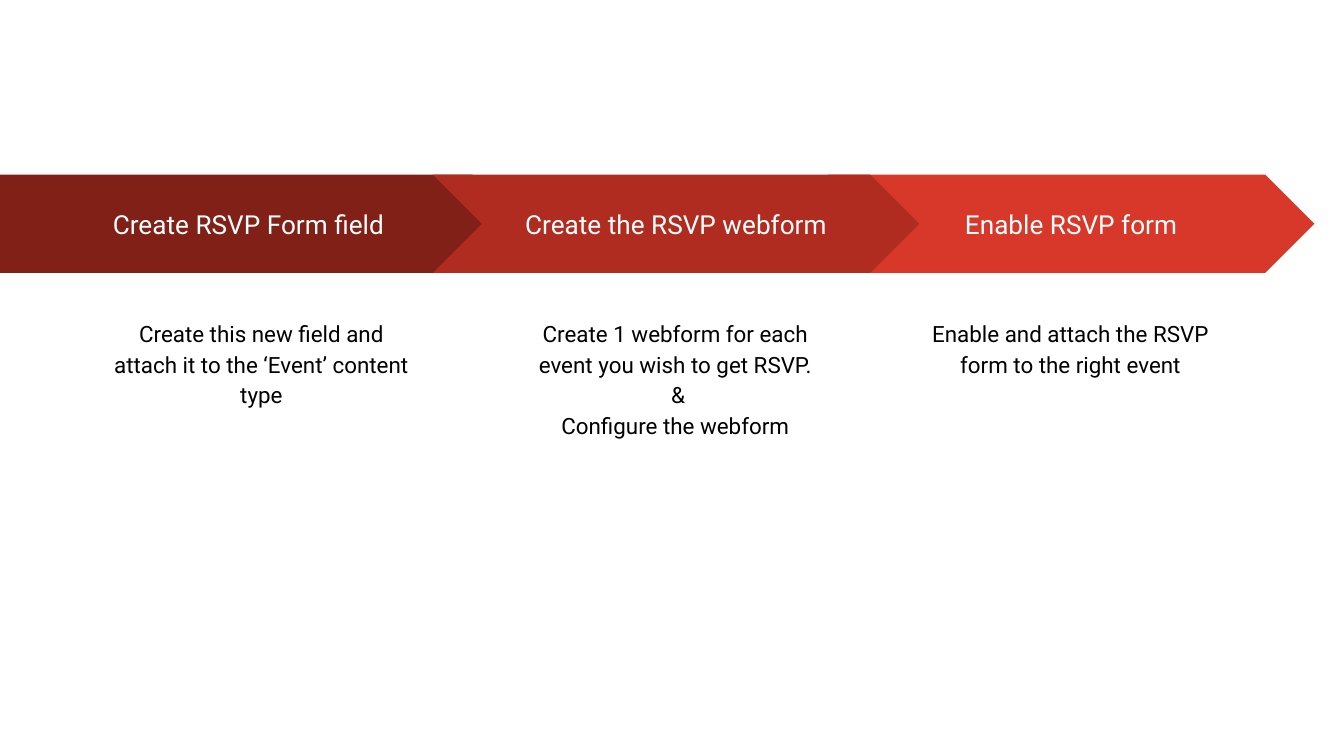
"""Build a three-step RSVP process slide with overlapping arrows."""
from dataclasses import dataclass

import pptx
import pptx.dml.color
import pptx.enum.shapes
import pptx.enum.text
import pptx.util

Inches = pptx.util.Inches
MSO_SHAPE = pptx.enum.shapes.MSO_SHAPE
ANCHOR = pptx.enum.text.MSO_ANCHOR
FONT = "Roboto"
SLIDE_WIDTH = 10
SLIDE_HEIGHT = SLIDE_WIDTH * 9 / 16
ARROW_TOP, ARROW_HEIGHT = 1.3, 0.73
BODY_TOP, BODY_WIDTH, BODY_HEIGHT = 2.25, 2.45, 2.86
CHEVRON_LEFT, CHEVRON_WIDTH, CHEVRON_STEP = 3.22, 3.62, 2.94
BODY_INDENT = 0.58


@dataclass
class Step:
    kind: MSO_SHAPE
    left: float
    width: float
    body_left: float
    color: str
    title: str
    body: tuple[str, ...]


def chevron(index: int, color: str, title: str, *body: str) -> Step:
    left = CHEVRON_LEFT + index * CHEVRON_STEP
    return Step(MSO_SHAPE.CHEVRON, left, CHEVRON_WIDTH, left + BODY_INDENT, color, title, body)


STEPS = [
    chevron(1, "D83829", "Enable RSVP form",
            "Enable and attach the RSVP form to the right event"),
    Step(MSO_SHAPE.PENTAGON, 0, 3.88, 0.72, "802017", "Create RSVP Form field",
         ("Create this new field and attach it to the ‘Event’ content type",)),
    chevron(0, "B02C20", "Create the RSVP webform",
            "Create 1 webform for each event you wish to get RSVP.",
            " &", "Configure the webform"),
]


def rgb(value: str) -> pptx.dml.color.RGBColor:
    return pptx.dml.color.RGBColor.from_string(value)


def write(tf: pptx.text.text.TextFrame, lines: tuple[str, ...], size: float,
          color: str, anchor: ANCHOR, spacing: float) -> None:
    tf.word_wrap = True
    tf.vertical_anchor = anchor
    tf.margin_left = tf.margin_right = tf.margin_top = tf.margin_bottom = Inches(0.1)
    for i, line in enumerate(lines):
        p = tf.add_paragraph() if i else tf.paragraphs[0]
        p.alignment = pptx.enum.text.PP_ALIGN.CENTER
        p.line_spacing = spacing
        r = p.add_run()
        r.text = line
        r.font.name = FONT
        r.font.size = pptx.util.Pt(size)
        r.font.color.rgb = rgb(color)


def draw_step(s: pptx.slide.Slide, step: Step) -> None:
    shapes = s.shapes.add_group_shape().shapes
    sp = shapes.add_shape(step.kind, Inches(step.left), Inches(ARROW_TOP),
                          Inches(step.width), Inches(ARROW_HEIGHT))
    sp.shadow.inherit = False
    sp.fill.solid()
    sp.fill.fore_color.rgb = rgb(step.color)
    sp.line.fill.background()
    write(sp.text_frame, (step.title,), 14, "FFFFFF", ANCHOR.MIDDLE, 1.0)
    box = shapes.add_textbox(Inches(step.body_left), Inches(BODY_TOP),
                             Inches(BODY_WIDTH), Inches(BODY_HEIGHT))
    write(box.text_frame, step.body, 12, "000000", ANCHOR.TOP, 1.15)


def main() -> None:
    prs = pptx.Presentation()
    prs.slide_width, prs.slide_height = Inches(SLIDE_WIDTH), Inches(SLIDE_HEIGHT)
    s = prs.slides.add_slide(prs.slide_layouts[6])
    for step in STEPS:
        draw_step(s, step)
    prs.save("out.pptx")


if __name__ == "__main__":
    main()
